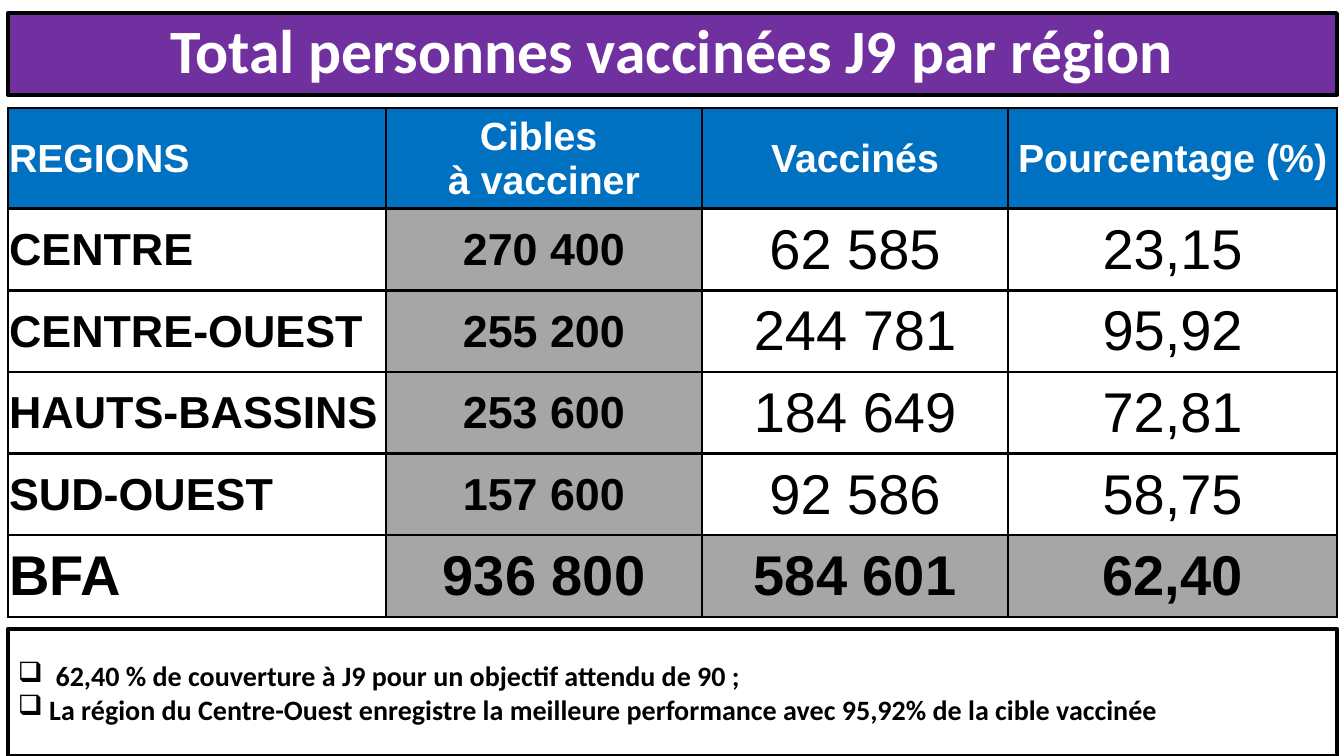
"""Build a slide with vaccination coverage by region."""
from dataclasses import dataclass

from lxml import etree
from pptx import Presentation
from pptx.dml.color import RGBColor
from pptx.enum.shapes import MSO_SHAPE
from pptx.enum.text import MSO_ANCHOR, PP_ALIGN
from pptx.oxml.ns import qn
from pptx.util import Inches, Pt

RECTANGLE = MSO_SHAPE.RECTANGLE
MIDDLE = MSO_ANCHOR.MIDDLE
LEFT, CENTER = PP_ALIGN.LEFT, PP_ALIGN.CENTER

COLORS = {
    "purple": "7030A0",
    "blue": "0070C0",
    "gray": "A6A6A6",
    "white": "FFFFFF",
    "black": "000000",
}
MARGIN, WIDTH = 0.08, 13.18
COLUMN_WIDTHS = (3.75, 3.13, 3.04, 3.26)
HEADER_HEIGHT, ROW_HEIGHT = 1.0, 0.81
BULLET_INDENT = 0.31


@dataclass(frozen=True)
class Panel:
    """A bordered box holding paragraphs of text."""
    top: float
    height: float
    fill: str
    color: str
    size: int
    lines: tuple[str, ...]
    bulleted: bool = False


@dataclass(frozen=True)
class CellStyle:
    """The look of one table cell."""
    size: int
    bold: bool = True
    fill: str = "white"
    color: str = "black"


@dataclass(frozen=True)
class Row:
    """One table row with a style for each column."""
    texts: tuple[str, ...]
    styles: tuple[CellStyle, ...]


HEADER = CellStyle(28, fill="blue", color="white")
REGION = CellStyle(32)
TARGET = CellStyle(32, fill="gray")
RESULT = CellStyle(40, bold=False)
TOTAL_NAME = CellStyle(40)
TOTAL = CellStyle(40, fill="gray")

HEADER_STYLES = (HEADER,) * 4
REGION_STYLES = (REGION, TARGET, RESULT, RESULT)
TOTAL_STYLES = (TOTAL_NAME, TOTAL, TOTAL, TOTAL)

ROWS = (
    Row(("REGIONS", "Cibles \nà vacciner", "Vaccinés", "Pourcentage (%)"), HEADER_STYLES),
    Row(("CENTRE", "270 400", "62 585", "23,15"), REGION_STYLES),
    Row(("CENTRE-OUEST", "255 200", "244 781", "95,92"), REGION_STYLES),
    Row(("HAUTS-BASSINS", "253 600", "184 649", "72,81"), REGION_STYLES),
    Row(("SUD-OUEST", "157 600", "92 586", "58,75"), REGION_STYLES),
    Row(("BFA", "936 800", "584 601", "62,40"), TOTAL_STYLES),
)

TITLE = Panel(0.13, 0.81, "purple", "white", 44, ("Total personnes vaccinées J9 par région",))
NOTES = Panel(6.24, 1.26, "white", "black", 20, (
    " 62,40 % de couverture à J9 pour un objectif attendu de 90 ;",
    "La région du Centre-Ouest enregistre la meilleure performance avec 95,92% de la cible vaccinée",
), bulleted=True)


def rgb(name: str) -> RGBColor:
    """Look up a named colour."""
    return RGBColor.from_string(COLORS[name])


def set_font(p, name: str, size: int, bold: bool, color: str) -> None:
    """Set the font of a paragraph."""
    p.font.name = name
    p.font.size = Pt(size)
    p.font.bold = bold
    p.font.color.rgb = rgb(color)


def add_bullet(p) -> None:
    """Give a paragraph a box bullet with a hanging indent."""
    pPr = p._p.get_or_add_pPr()
    indent = Inches(BULLET_INDENT)
    pPr.set("marL", str(indent))
    pPr.set("indent", str(-indent))
    bullet = etree.Element(qn("a:buChar"), char="❑")
    pPr.insert_element_before(bullet, "a:tabLst", "a:defRPr", "a:extLst")


def add_panel(s, panel: Panel) -> None:
    """Draw a bordered text panel."""
    sp = s.shapes.add_shape(RECTANGLE, Inches(MARGIN), Inches(panel.top),
                            Inches(WIDTH), Inches(panel.height))
    sp.shadow.inherit = False
    sp.fill.solid()
    sp.fill.fore_color.rgb = rgb(panel.fill)
    sp.line.color.rgb = rgb("black")
    sp.line.width = Pt(3)
    tf = sp.text_frame
    tf.word_wrap = True
    tf.vertical_anchor = MIDDLE
    for i, text in enumerate(panel.lines):
        p = tf.add_paragraph() if i else tf.paragraphs[0]
        p.text = text
        p.alignment = LEFT if panel.bulleted else CENTER
        set_font(p, "Calibri", panel.size, True, panel.color)
        if panel.bulleted:
            add_bullet(p)
        else:
            p.line_spacing = 0.9


def set_borders(cell) -> None:
    """Draw black lines on all four sides of a cell."""
    tcPr = cell._tc.get_or_add_tcPr()
    for side in ("lnL", "lnR", "lnT", "lnB"):
        ln = etree.SubElement(tcPr, qn(f"a:{side}"), w=str(Pt(2)))
        fill = etree.SubElement(ln, qn("a:solidFill"))
        etree.SubElement(fill, qn("a:srgbClr"), val=COLORS["black"])


def fill_cell(cell, text: str, style: CellStyle, alignment: PP_ALIGN) -> None:
    """Write and style one table cell."""
    cell.vertical_anchor = MIDDLE
    cell.margin_left = cell.margin_right = cell.margin_top = Inches(0.01)
    cell.margin_bottom = 0
    set_borders(cell)
    cell.fill.solid()
    cell.fill.fore_color.rgb = rgb(style.fill)
    p = cell.text_frame.paragraphs[0]
    p.text = text
    p.alignment = alignment
    set_font(p, "Arial", style.size, style.bold, style.color)


def add_region_table(s) -> None:
    """Draw the table of results by region."""
    height = HEADER_HEIGHT + ROW_HEIGHT * (len(ROWS) - 1)
    table = s.shapes.add_table(len(ROWS), len(COLUMN_WIDTHS), Inches(MARGIN), Inches(1.07),
                               Inches(WIDTH), Inches(height)).table
    table.first_row = table.horz_banding = False
    for column, width in zip(table.columns, COLUMN_WIDTHS):
        column.width = Inches(width)
    for i, row in enumerate(ROWS):
        table.rows[i].height = Inches(ROW_HEIGHT if i else HEADER_HEIGHT)
        for j, (text, style) in enumerate(zip(row.texts, row.styles)):
            fill_cell(table.cell(i, j), text, style, CENTER if j else LEFT)


def main() -> None:
    """Build and save the slide."""
    prs = Presentation()
    prs.slide_width, prs.slide_height = Inches(13.33), Inches(7.5)
    s = prs.slides.add_slide(prs.slide_layouts[6])
    add_panel(s, TITLE)
    add_panel(s, NOTES)
    add_region_table(s)
    prs.save("out.pptx")


if __name__ == "__main__":
    main()
